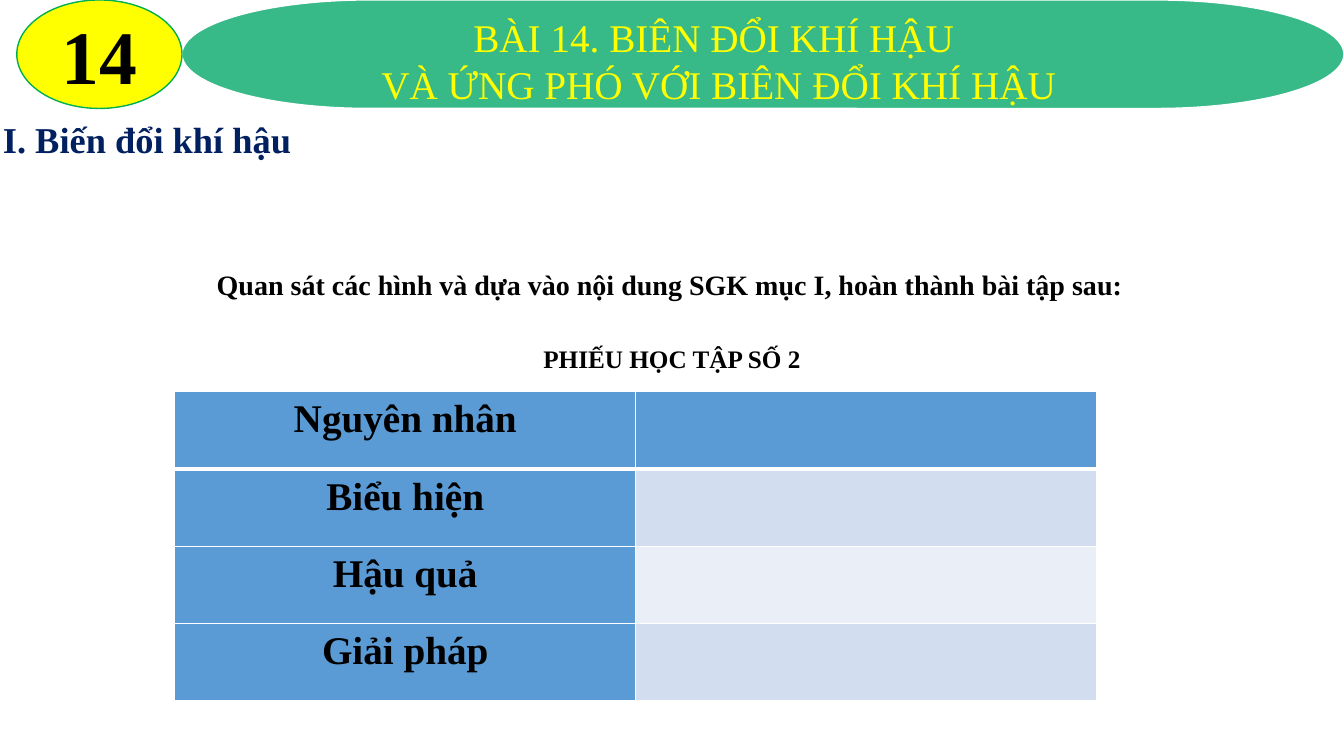
from lxml import etree
from pptx import Presentation
from pptx.dml.color import RGBColor
from pptx.enum.shapes import MSO_SHAPE
from pptx.enum.text import MSO_ANCHOR, PP_ALIGN
from pptx.oxml.ns import qn
from pptx.util import Pt

LEFT, CENTER = PP_ALIGN.LEFT, PP_ALIGN.CENTER
TOP, MIDDLE = MSO_ANCHOR.TOP, MSO_ANCHOR.MIDDLE
OVAL, TERMINATOR = MSO_SHAPE.OVAL, MSO_SHAPE.FLOWCHART_TERMINATOR

BLACK = RGBColor(0x00, 0x00, 0x00)
WHITE = RGBColor(0xFF, 0xFF, 0xFF)
NAVY = RGBColor(0x00, 0x20, 0x60)
YELLOW = RGBColor(0xFF, 0xFF, 0x00)
GREEN = RGBColor(0x00, 0xB0, 0x50)
TEAL = RGBColor(0x37, 0xB9, 0x88)
BLUE = RGBColor(0x5B, 0x9B, 0xD5)
BAND_DARK = RGBColor(0xD2, 0xDE, 0xEF)
BAND_LIGHT = RGBColor(0xEA, 0xEF, 0xF7)


class LessonSlide:
    """Holds the text style and the current page; lengths are in points."""

    font_name = "Times New Roman"

    def __init__(self, page):
        self.page = page

    def set_text(self, frame, text, size, color=BLACK, bold=True, align=CENTER,
                 spacing=1.0):
        frame.text = text
        for para in frame.paragraphs:
            para.alignment = align
            para.line_spacing = spacing
            for span in para.runs:
                span.font.name = self.font_name
                span.font.size = Pt(size)
                span.font.bold = bold
                span.font.color.rgb = color

    def title(self, area, text, size, color):
        box = self.page.shapes.title
        box.left, box.top, box.width, box.height = map(Pt, area)
        box.text_frame.vertical_anchor = TOP
        self.set_text(box.text_frame, text, size, color, bold=False)
        # Bring the title in front of the banner
        self.page.shapes.element.append(box.element)

    def label(self, area, text, size, wrap=True, **style):
        box = self.page.shapes.add_textbox(*map(Pt, area))
        box.text_frame.word_wrap = wrap
        self.set_text(box.text_frame, text, size, **style)

    def shape(self, kind, area, fill, line):
        shape = self.page.shapes.add_shape(kind, *map(Pt, area))
        shape.shadow.inherit = False
        shape.fill.solid()
        shape.fill.fore_color.rgb = fill
        shape.line.color.rgb = line
        shape.line.width = Pt(1)
        return shape

    def borders(self, cell, top, bottom):
        properties = cell._tc.get_or_add_tcPr()
        for side, width in (("L", 1), ("R", 1), ("T", top), ("B", bottom)):
            line = etree.SubElement(properties, qn(f"a:ln{side}"), w=str(Pt(width)))
            fill = etree.SubElement(line, qn("a:solidFill"))
            etree.SubElement(fill, qn("a:srgbClr"), val=str(WHITE))

    def worksheet(self, area, topics, size):
        table = self.page.shapes.add_table(len(topics), 2, *map(Pt, area)).table
        for row, topic in enumerate(topics):
            band = BAND_DARK if row % 2 else BAND_LIGHT
            answer_fill = band if row else BLUE
            for column, fill in enumerate((BLUE, answer_fill)):
                cell = table.cell(row, column)
                self.borders(cell, top=3 if row == 1 else 1,
                             bottom=3 if row == 0 else 1)
                cell.fill.solid()
                cell.fill.fore_color.rgb = fill
            topic_cell = table.cell(row, 0)
            topic_cell.margin_left = topic_cell.margin_right = Pt(5)
            topic_cell.margin_top = topic_cell.margin_bottom = 0
            self.set_text(topic_cell.text_frame, topic, size, spacing=1.15)


def main():
    deck = Presentation()
    deck.slide_width, deck.slide_height = Pt(960), Pt(540)
    lesson = LessonSlide(deck.slides.add_slide(deck.slide_layouts[5]))

    # Section heading and task
    lesson.label((-5, 83.5, 280, 36), "I. Biến đổi khí hậu", 26,
                 color=NAVY, align=LEFT, spacing=0.9)
    lesson.label((104.5, 187.2, 748, 31.5),
                 "Quan sát các hình và dựa vào nội dung SGK mục I, "
                 "hoàn thành bài tập sau:", 20)
    lesson.label((380, 242, 200, 29), "PHIẾU HỌC TẬP SỐ 2", 18, wrap=False)

    # Worksheet table
    lesson.worksheet((124.8, 279.6, 658.6, 221),
                     ("Nguyên nhân", "Biểu hiện", "Hậu quả", "Giải pháp"), 28)

    # Banner with lesson number and title
    lesson.shape(TERMINATOR, (130, 0, 830, 77.5), TEAL, WHITE)
    badge = lesson.shape(OVAL, (12, 0, 118, 77.5), YELLOW, GREEN)
    badge.text_frame.vertical_anchor = MIDDLE
    lesson.set_text(badge.text_frame, "14", 54)
    lesson.title((155.5, 6, 715.5, 75),
                 "BÀI 14. BIÊN ĐỔI KHÍ HẬU \nVÀ ỨNG PHÓ VỚI BIÊN ĐỔI KHÍ HẬU",
                 28, YELLOW)

    deck.save("out.pptx")


if __name__ == "__main__":
    main()
